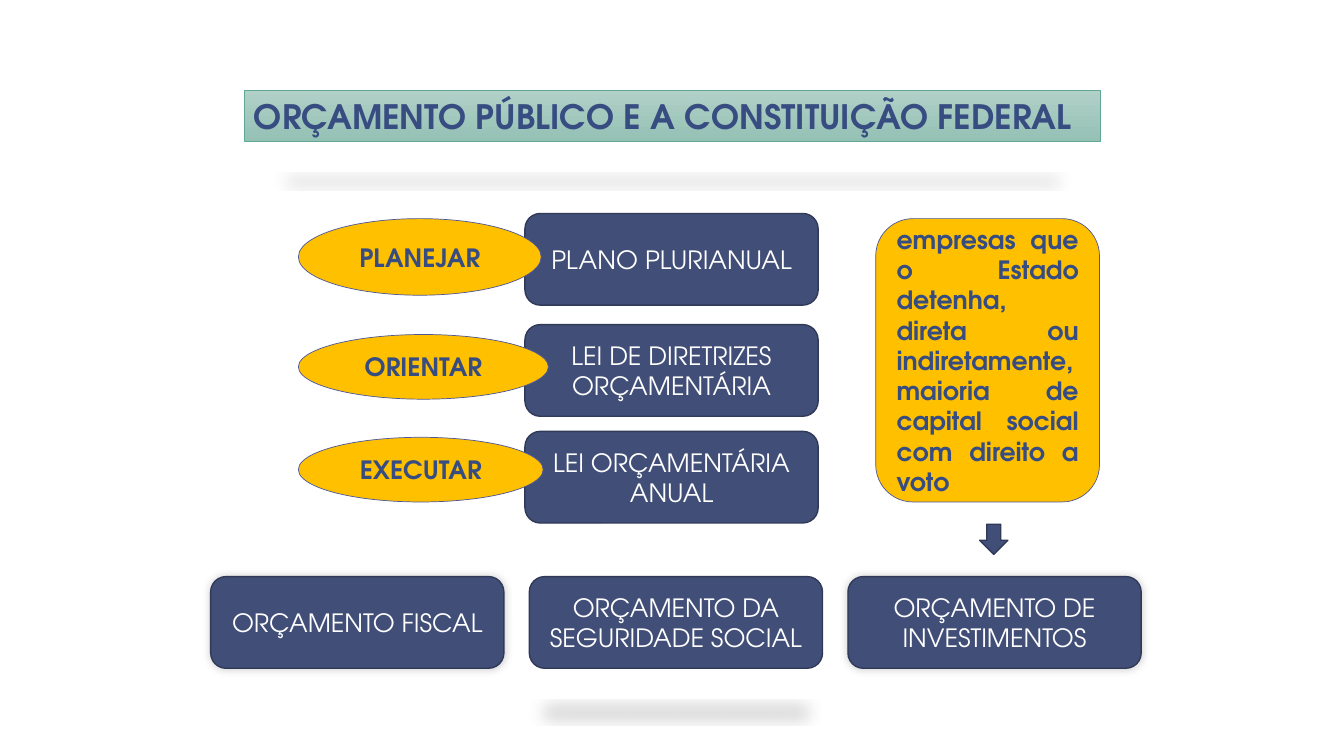
from lxml import etree
from pptx import Presentation
from pptx.dml.color import RGBColor
from pptx.enum.shapes import MSO_SHAPE
from pptx.enum.text import MSO_ANCHOR, PP_ALIGN
from pptx.oxml.ns import qn
from pptx.util import Cm, Pt

RECT, ROUND = MSO_SHAPE.RECTANGLE, MSO_SHAPE.ROUNDED_RECTANGLE
OVAL, ARROW = MSO_SHAPE.OVAL, MSO_SHAPE.DOWN_ARROW
TOP, MID = MSO_ANCHOR.TOP, MSO_ANCHOR.MIDDLE
LEFT, CENTER, JUST = PP_ALIGN.LEFT, PP_ALIGN.CENTER, PP_ALIGN.JUSTIFY

FONT = "TeX Gyre Adventor"
NAVY = {"fill": "414E77", "line": "303A58", "width": 1, "ink": "FFFFFF", "bold": False}
GOLD = {"fill": "FFC000", "line": "4E5798", "width": 0.5, "ink": "374C81", "bold": True}
MINT = {"fill": ("B1D0C7", "95C1B5"), "line": "61A796", "width": 0.5, "ink": "374C81", "bold": True}

BELOW = {"blurRad": 152400, "dist": 317500, "dir": 5400000,
         "sx": 90000, "sy": -19000, "rotWithShape": 0, "alpha": 15000}
SIDE = {"blurRad": 76200, "sy": 23000, "rotWithShape": 0, "alpha": 20000}
LEAN_L = {**SIDE, "dir": 13500000, "kx": 1200000, "algn": "br"}
LEAN_R = {**SIDE, "dir": 18900000, "kx": -1200000, "algn": "bl"}

TITLE = "ORÇAMENTO PÚBLICO E A CONSTITUIÇÃO FEDERAL"
PLANS = [
    ("PLANO PLURIANUAL", 5.38),
    ("LEI DE DIRETRIZES ORÇAMENTÁRIA", 8.18),
    ("LEI ORÇAMENTÁRIA ANUAL", 10.87),
]
BUDGETS = [
    ("ORÇAMENTO FISCAL", LEAN_L),
    ("ORÇAMENTO DA SEGURIDADE SOCIAL", BELOW),
    ("ORÇAMENTO DE INVESTIMENTOS", LEAN_R),
]
VERBS = [
    ("PLANEJAR", 5.51, 6.12, 1.93),
    ("ORIENTAR", 8.43, 6.3, 1.63),
    ("EXECUTAR", 11.02, 6.17, 1.63),
]
NOTE = ("empresas que o Estado detenha, direta ou indiretamente, "
        "maioria de capital social com direito a voto")
BOX_W, BOX_H = 7.39, 2.31


def paint(color, code):
    """Set a colour from its hex string."""
    color.rgb = RGBColor.from_string(code)


def cast(shape, shade):
    """Add an outer shadow to a shape."""
    effects = shape._element.spPr.find(qn("a:effectLst"))
    attrs = {key: str(val) for key, val in shade.items() if key != "alpha"}
    outer = etree.SubElement(effects, qn("a:outerShdw"), attrs)
    black = etree.SubElement(outer, qn("a:srgbClr"), val="000000")
    etree.SubElement(black, qn("a:alpha"), val=str(shade["alpha"]))


def draw(slide, kind, place, style, text="", size=18, align=CENTER, anchor=MID, shade=None):
    """Draw one styled shape with its text."""
    shape = slide.shapes.add_shape(kind, *map(Cm, place))
    fill = style["fill"]
    if isinstance(fill, tuple):
        shape.fill.gradient()
        shape.fill.gradient_angle = 270
        for stop, code in zip(shape.fill.gradient_stops, fill):
            paint(stop.color, code)
    else:
        shape.fill.solid()
        paint(shape.fill.fore_color, fill)
    paint(shape.line.color, style["line"])
    shape.line.width = Pt(style["width"])
    shape.shadow.inherit = False
    if shade:
        cast(shape, shade)
    if text:
        frame = shape.text_frame
        frame.text = text
        frame.word_wrap = True
        frame.vertical_anchor = anchor
        para = frame.paragraphs[0]
        para.alignment = align
        font = para.runs[0].font
        font.name, font.size, font.bold = FONT, Pt(size), style["bold"]
        paint(font.color, style["ink"])


def main():
    """Build the slide and save it."""
    deck = Presentation()
    deck.slide_width, deck.slide_height = Cm(33.87), Cm(19.05)
    slide = deck.slides.add_slide(deck.slide_layouts[6])
    draw(slide, RECT, (6.15, 2.29, 21.59, 1.27), MINT, TITLE, 24, LEFT, TOP, BELOW)
    for text, top in PLANS:
        draw(slide, ROUND, (13.23, top, BOX_W, BOX_H), NAVY, text)
    for col, (text, shade) in enumerate(BUDGETS):
        place = (5.31 + 8.03 * col, 14.53, BOX_W, BOX_H)
        draw(slide, ROUND, place, NAVY, text, shade=shade)
    for text, top, width, height in VERBS:
        draw(slide, OVAL, (7.52, top, width, height), GOLD, text)
    draw(slide, ROUND, (22.07, 5.51, 5.64, 7.14), GOLD, NOTE, align=JUST)
    draw(slide, ARROW, (24.69, 13.21, 0.71, 0.76), NAVY)
    deck.save("out.pptx")


if __name__ == "__main__":
    main()
